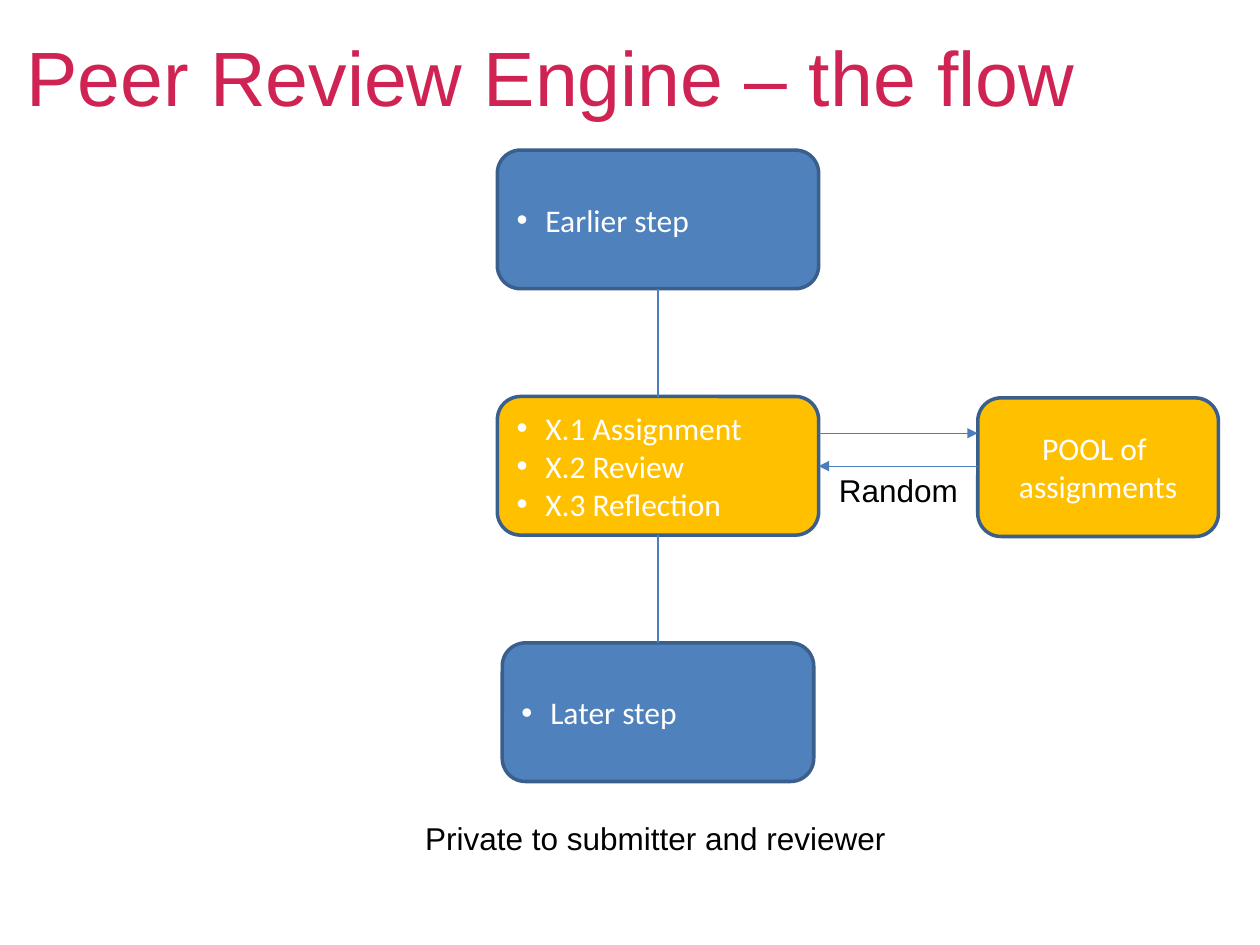
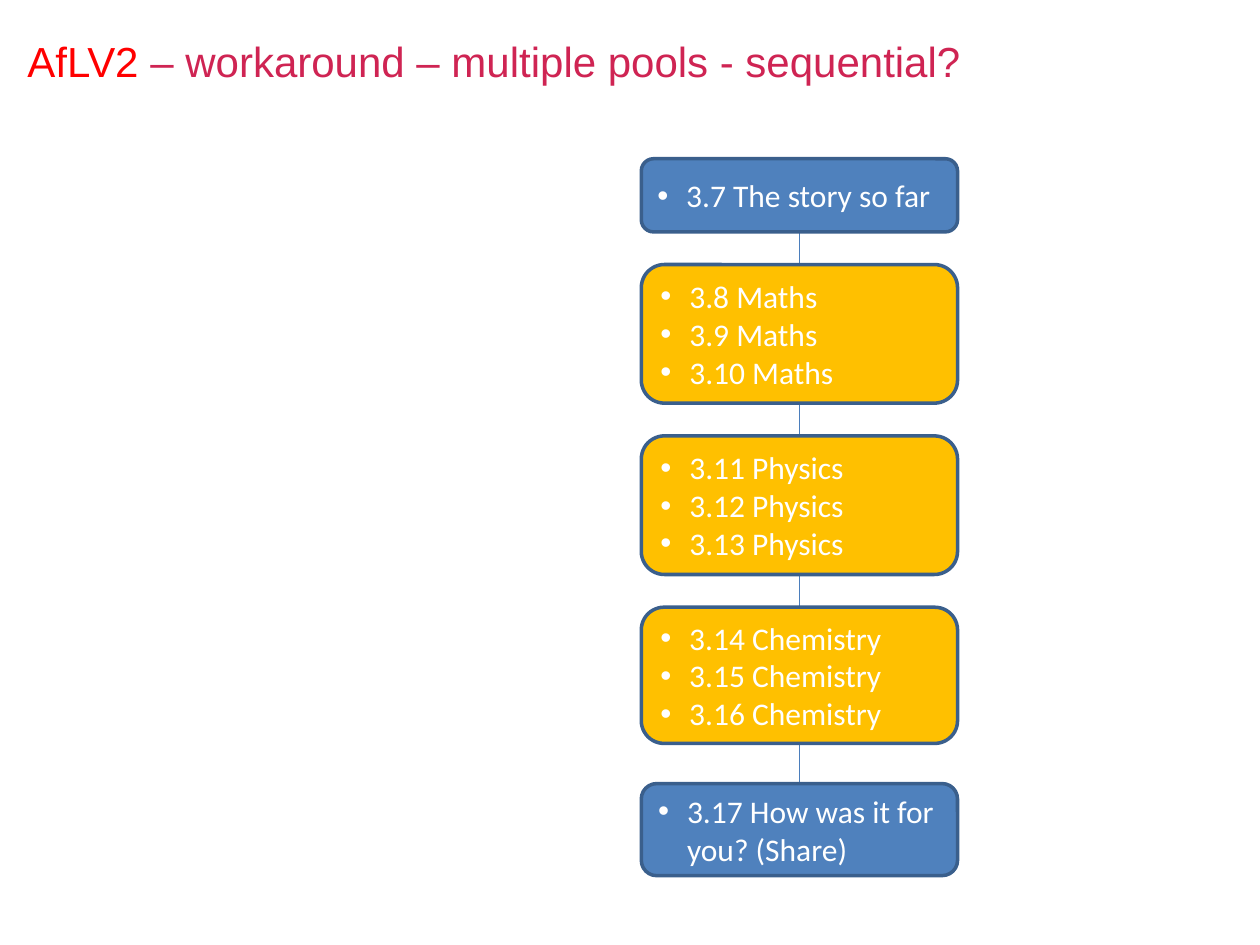
import pptx
import pptx.dml.color
import pptx.enum.shapes
import pptx.enum.text
import pptx.oxml
import pptx.oxml.ns
import pptx.util
from lxml import etree

Pt = pptx.util.Pt
ALIGN = pptx.enum.text.PP_ALIGN

CRIMSON, RED, BLACK, WHITE = "CF2453", "FF0000", "000000", "FFFFFF"
STEP_BLUE, POOL_AMBER, OUTLINE, LINK_BLUE = "4F81BD", "FFC000", "3A5F8C", "4B7EBC"
HEADING_FONT, STEP_FONT = "Arial", "Calibri"
BODY_SIZE = 18
BULLET_INDENT = Pt(16.5)


def color(value):
    """Turn a hex string into a colour."""
    return pptx.dml.color.RGBColor.from_string(value)


def sub(parent, tag, **attributes):
    """Append a drawing element to a parent element."""
    return etree.SubElement(parent, pptx.oxml.ns.qn(tag), **attributes)


def style(font, name, size, hue):
    """Set the face, size and colour of a font."""
    font.name = name
    font.size = Pt(size)
    font.color.rgb = color(hue)


def add_bullet(para):
    """Give a paragraph a hanging round bullet."""
    properties = para._p.get_or_add_pPr()
    properties.set("marL", str(BULLET_INDENT))
    properties.set("indent", str(-BULLET_INDENT))
    sub(properties, "a:buFont", typeface="Arial")
    sub(properties, "a:buChar", char="•")


def add_title(page, left, top, size, spans):
    """Write the slide title from (text, colour) spans."""
    box = page.shapes.add_textbox(Pt(left), Pt(top), Pt(621), Pt(80))
    box.text_frame.word_wrap = True
    para = box.text_frame.paragraphs[0]
    for text, hue in spans:
        span = para.add_run()
        span.text = text
        style(span.font, HEADING_FONT, size, hue)


def add_label(page, center, top, width, text):
    """Write a one-line centred caption."""
    box = page.shapes.add_textbox(Pt(center - width / 2), Pt(top), Pt(width), Pt(29))
    box.text_frame.word_wrap = False
    para = box.text_frame.paragraphs[0]
    para.text = text
    para.alignment = ALIGN.CENTER
    style(para.font, HEADING_FONT, BODY_SIZE, BLACK)


def add_step(page, center, top, width, height, fill, lines, bulleted=True):
    """Draw a rounded box that holds its lines of text."""
    box = page.shapes.add_shape(
        pptx.enum.shapes.MSO_SHAPE.ROUNDED_RECTANGLE,
        Pt(center - width / 2), Pt(top), Pt(width), Pt(height))
    box.shadow.inherit = False
    box.fill.solid()
    box.fill.fore_color.rgb = color(fill)
    box.line.color.rgb = color(OUTLINE)
    box.line.width = Pt(2)
    frame = box.text_frame
    frame.word_wrap = True
    frame.vertical_anchor = pptx.enum.text.MSO_ANCHOR.MIDDLE
    frame.text = "\n".join(lines)
    for para in frame.paragraphs:
        para.alignment = ALIGN.LEFT if bulleted else ALIGN.CENTER
        if bulleted:
            add_bullet(para)
        style(para.font, STEP_FONT, BODY_SIZE, WHITE)


def add_link(page, start, end, arrow=False):
    """Join two points with a thin line, with an optional arrowhead at the end."""
    link = page.shapes.add_connector(
        pptx.enum.shapes.MSO_CONNECTOR.STRAIGHT, *map(Pt, start + end))
    link.line.color.rgb = color(LINK_BLUE)
    link.line.width = Pt(0.75)
    if arrow:
        sub(link.line._get_or_add_ln(), "a:tailEnd", type="triangle")
    sub(link._element.spPr, "a:effectLst")


def build_flow(page):
    """Show the steps of the review and the pool they draw on."""
    add_title(page, 8, 13.5, 44, [("Peer Review Engine – the flow", CRIMSON)])
    center, first_top, pitch, height = 376, 85.8, 140.8, 79.2
    steps = [
        (183.6, STEP_BLUE, ["Earlier step"]),
        (183.6, POOL_AMBER, ["X.1 Assignment", "X.2 Review", "X.3 Reflection"]),
        (178, STEP_BLUE, ["Later step"]),
    ]
    for index, (width, fill, lines) in enumerate(steps):
        top = first_top + index * pitch
        add_step(page, center, top, width, height, fill, lines)
        if index:
            add_link(page, (center, top - pitch + height), (center, top))

    add_step(page, 627.5, 227.4, 137.5, height, POOL_AMBER,
             ["POOL of ", "assignments"], bulleted=False)
    step_edge, pool_edge = 467.8, 558.7
    add_link(page, (step_edge, 247.6), (pool_edge, 247.6), arrow=True)
    add_link(page, (pool_edge, 266.4), (step_edge, 266.4), arrow=True)
    add_label(page, 513.4, 265.7, 83.5, "Random")
    add_label(page, 374.5, 464.4, 280, "Private to submitter and reviewer")


def build_sequence(page):
    """Show one pool per subject in a single column."""
    add_title(page, 8.6, 16.5, 24, [
        ("AfLV2", RED), (" – workaround – multiple pools - sequential?", CRIMSON)])
    center, width = 456.8, 180.7
    add_link(page, (center, 132.5), (center, 447.8))
    add_step(page, center, 90.7, width, 41.8, STEP_BLUE, ["3.7 The story so far"])
    pools = [("Maths", 79.2), ("Physics", 79.2), ("Chemistry", 77.8)]
    for index, (subject, height) in enumerate(pools):
        first = 8 + 3 * index
        lines = [f"3.{number} {subject}" for number in range(first, first + 3)]
        add_step(page, center, 151.2 + 97.9 * index, width, height, POOL_AMBER, lines)
    add_step(page, center, 447.8, width, 52.6, STEP_BLUE,
             ["3.17 How was it for you? (Share)"])


def main():
    """Build the deck and save it."""
    deck = pptx.Presentation()
    deck.slide_width, deck.slide_height = Pt(720), Pt(540)
    for build in (build_flow, build_sequence):
        build(deck.slides.add_slide(deck.slide_layouts[6]))
    deck.save("out.pptx")


if __name__ == "__main__":
    main()
